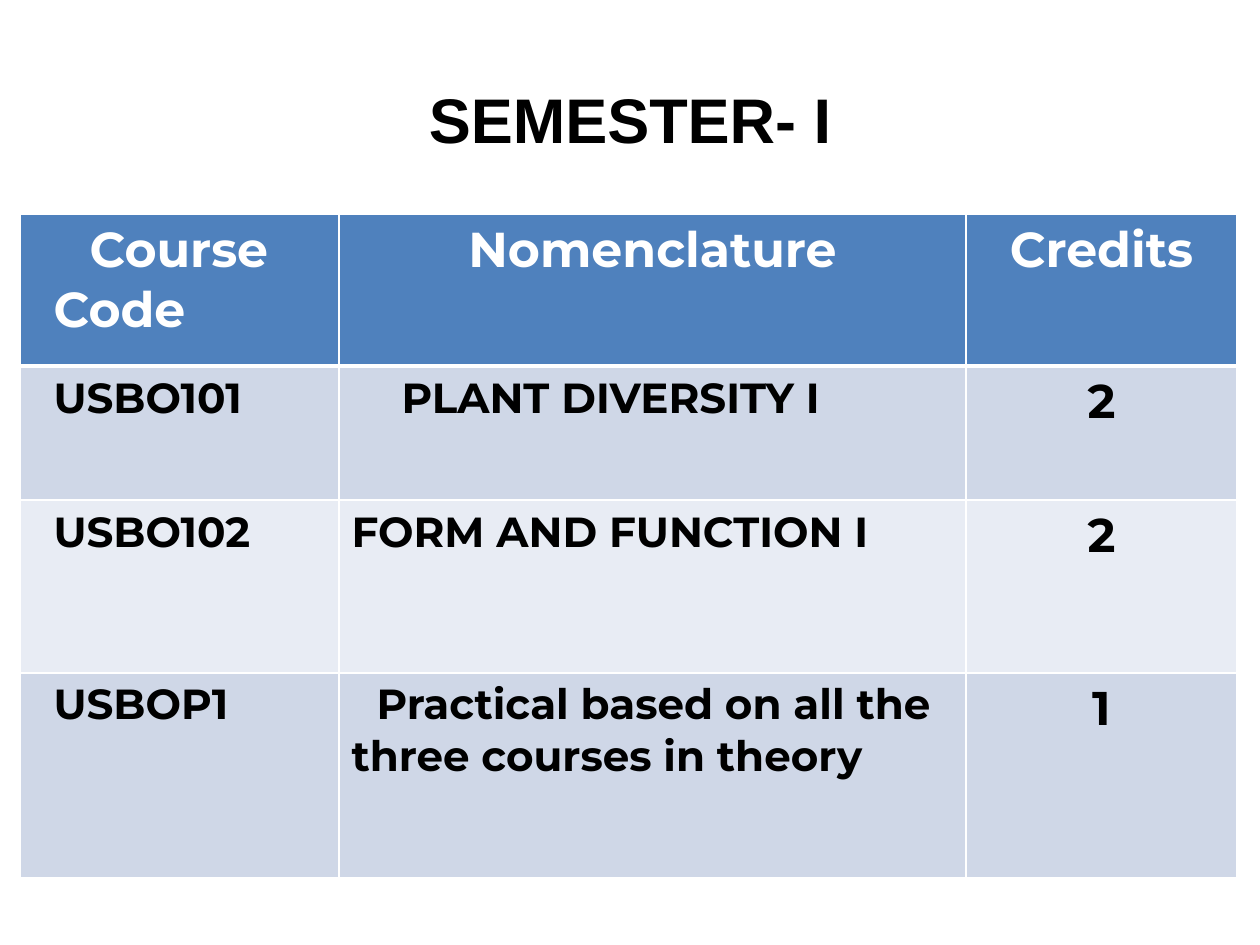
from lxml import etree
from pptx import Presentation, util as u
from pptx.dml.color import RGBColor
from pptx.enum import text
from pptx.oxml import ns

# Content: a body row is code, course, first-line indent in px, credits
TITLE = "SEMESTER- I "
HEAD = ("Course Code", "Nomenclature", "Credits")
COURSES = [
    ("USBO101", "PLANT DIVERSITY I", 50, "2"),
    ("USBO102", "FORM AND FUNCTION I", 0, "2"),
    ("USBOP1", "Practical based on all the three courses in theory", 25, "1"),
]

# Layout in px
SLIDE = (1260, 945)
TITLE_BOX = (365, 74, 548, 121)
ORIGIN = (20, 214)
COLS = (319, 627, 271)
ROWS = (152, 134, 173, 205)
CODE_PAD, HEAD_PAD = 21, 36

THEME = {
    "title": dict(name="Arial", size=u.Pt(36), color="000000"),
    "head": dict(name="Montserrat", size=u.Pt(28), color="FFFFFF"),
    "body": dict(name="Montserrat", size=u.Pt(24), color="000000"),
    "credit": dict(name="Montserrat", size=u.Pt(27), color="000000"),
    "fills": ("4F81BD", "CFD7E7", "E8ECF4"),
    "rule": "FFFFFF",
}
LEFT, CENTER = text.PP_ALIGN.LEFT, text.PP_ALIGN.CENTER


def px(n):
    return u.Emu(round(n * 914400 / 126))


def write(frame, words, style, align=CENTER, pad=0, first=0):
    para = frame.paragraphs[0]
    para.alignment = align
    props = para._p.get_or_add_pPr()
    props.set("marL", str(px(pad)))
    props.set("indent", str(px(first)))
    run = para.add_run()
    run.text = words
    run.font.bold = True
    for key, val in THEME[style].items():
        if key == "color":
            run.font.color.rgb = RGBColor.from_string(val)
        else:
            setattr(run.font, key, val)


def rule(cell, sides):
    props = cell._tc.get_or_add_tcPr()
    for side, width in sides.items():
        line = etree.SubElement(props, ns.qn(f"a:ln{side}"), w=str(u.Pt(width)))
        fill = etree.SubElement(line, ns.qn("a:solidFill"))
        etree.SubElement(fill, ns.qn("a:srgbClr"), val=THEME["rule"])


def main():
    deck = Presentation()
    deck.slide_width, deck.slide_height = map(px, SLIDE)
    slide = deck.slides.add_slide(deck.slide_layouts[5])

    # Title
    title = slide.shapes.title
    title.left, title.top, title.width, title.height = map(px, TITLE_BOX)
    frame = title.text_frame
    form = dict(word_wrap=True, vertical_anchor=text.MSO_ANCHOR.TOP,
                auto_size=text.MSO_AUTO_SIZE.NONE)
    for key, val in form.items():
        setattr(frame, key, val)
    write(frame, TITLE, "title")

    # Table grid
    table = slide.shapes.add_table(len(ROWS), len(COLS), *map(
        px, (*ORIGIN, sum(COLS), sum(ROWS)))).table
    for col, width in zip(table.columns, COLS):
        col.width = px(width)
    for row, height in zip(table.rows, ROWS):
        row.height = px(height)

    # Cell texts with their styles and indents
    grid = [[(HEAD[0], "head", LEFT, CODE_PAD, HEAD_PAD),
             (HEAD[1], "head"), (HEAD[2], "head")]]
    for code, name, first, credit in COURSES:
        grid.append([(code, "body", LEFT, CODE_PAD),
                     (name, "body", LEFT, 0, first), (credit, "credit")])

    for r, line in enumerate(grid):
        shade = 0 if r == 0 else 2 - r % 2
        for c, item in enumerate(line):
            cell = table.cell(r, c)
            rule(cell, {"L": 1, "R": 1, "T": 3 if r == 1 else 1,
                        "B": 3 if r == 0 else 1})
            cell.fill.solid()
            cell.fill.fore_color.rgb = RGBColor.from_string(THEME["fills"][shade])
            write(cell.text_frame, *item)

    deck.save("out.pptx")


if __name__ == "__main__":
    main()
